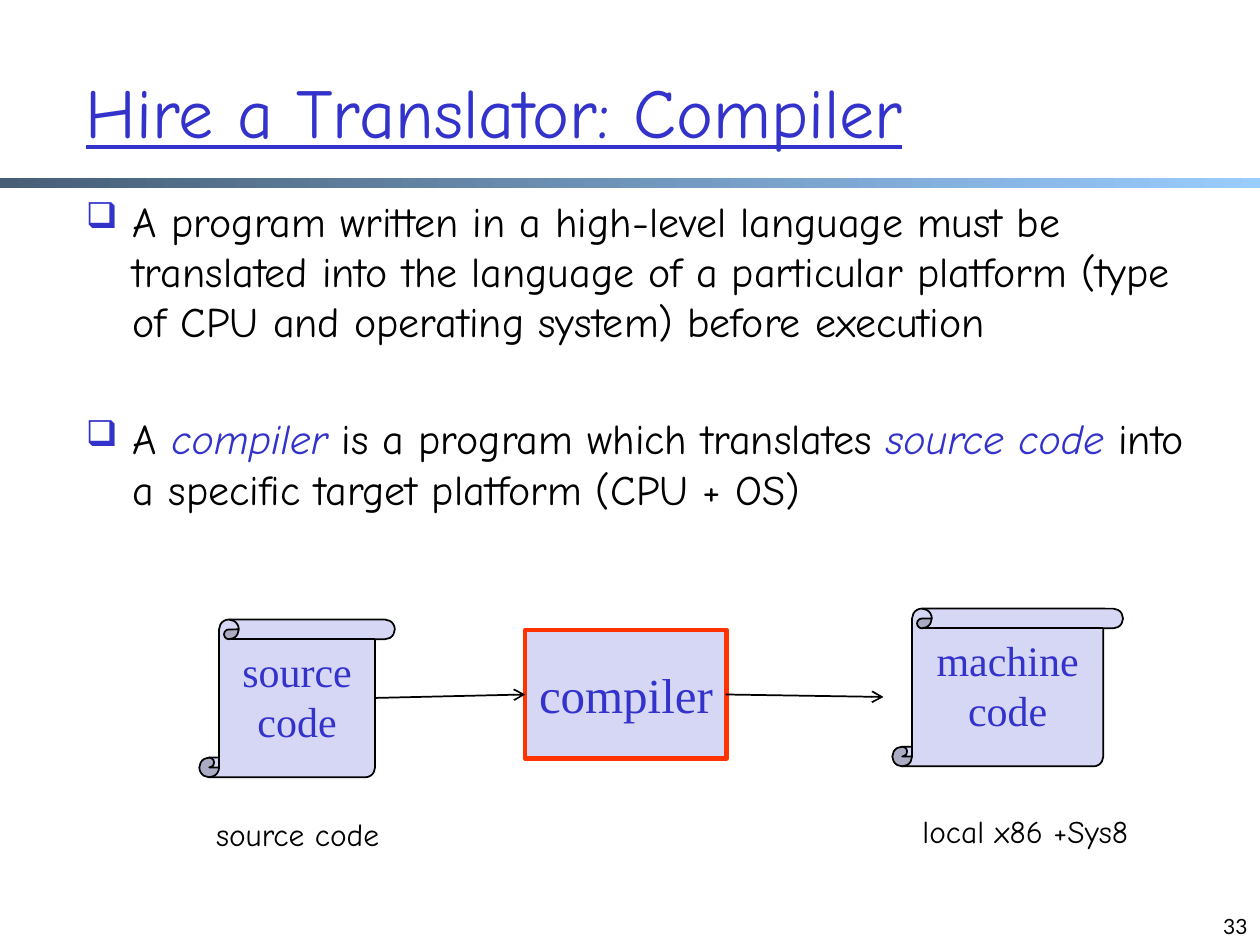
import pptx
import pptx.util
import pptx.dml.color
import pptx.enum.shapes
import pptx.enum.text
import pptx.oxml
import pptx.oxml.ns

Cm = pptx.util.Cm
Pt = pptx.util.Pt
RGBColor = pptx.dml.color.RGBColor
SHAPE = pptx.enum.shapes.MSO_SHAPE
ALIGN = pptx.enum.text.PP_ALIGN
ANCHOR = pptx.enum.text.MSO_ANCHOR

BLUE = RGBColor(0x33, 0x33, 0xCC)
LAVENDER = RGBColor(0xD6, 0xD6, 0xF5)
RED = RGBColor(0xFF, 0x33, 0x00)
BLACK = RGBColor(0, 0, 0)
SLATE = RGBColor(0x47, 0x5E, 0x76)
SKY = RGBColor(0x99, 0xCC, 0xFF)

HAND = "Comic Neue"
SERIF = "Times New Roman"
SANS = "Lato"


def format_run(r, font, size, color, italic=False):
    r.font.name = font
    r.font.size = Pt(size)
    r.font.color.rgb = color
    r.font.italic = italic


def set_text(tf, text, font, size, color, align, anchor, wrap=True):
    tf.text = text
    tf.word_wrap = wrap
    tf.vertical_anchor = anchor
    for p in tf.paragraphs:
        p.alignment = align
        for r in p.runs:
            format_run(r, font, size, color)


def add_text(s, box, text, font, size, color=BLACK, align=ALIGN.CENTER,
             anchor=ANCHOR.TOP, wrap=True):
    sp = s.shapes.add_textbox(*map(Cm, box))
    set_text(sp.text_frame, text, font, size, color, align, anchor, wrap)
    return sp


def add_divider(s):
    sp = s.shapes.add_shape(SHAPE.RECTANGLE, Cm(0), Cm(3.58), Cm(25.4), Cm(0.22))
    sp.shadow.inherit = False
    sp.line.fill.background()
    sp.fill.gradient()
    sp.fill.gradient_angle = 0
    for stop, color in zip(sp.fill.gradient_stops, (SLATE, SKY)):
        stop.color.rgb = color


def add_bullet(p):
    pPr = p._p.get_or_add_pPr()
    pPr.set("marL", str(Cm(0.95)))
    pPr.set("indent", str(-Cm(0.95)))
    ns = pptx.oxml.ns.nsdecls("a")
    for xml in (
        f'<a:buClr {ns}><a:srgbClr val="{BLUE}"/></a:buClr>',
        f'<a:buSzPct {ns} val="85000"/>',
        f'<a:buChar {ns} char="❑"/>',
    ):
        pPr.append(pptx.oxml.parse_xml(xml))


def add_bullets(s, box, items):
    tf = s.shapes.add_textbox(*map(Cm, box)).text_frame
    tf.word_wrap = True
    for i, (space, parts) in enumerate(items):
        p = tf.paragraphs[0] if i == 0 else tf.add_paragraph()
        p.space_before = Pt(space)
        add_bullet(p)
        for text, term in parts:
            r = p.add_run()
            r.text = text
            format_run(r, HAND, 24, BLUE if term else BLACK, term)


def add_node(s, kind, box, text, size, line, width, anchor, wrap=True):
    sp = s.shapes.add_shape(kind, *map(Cm, box))
    sp.shadow.inherit = False
    sp.fill.solid()
    sp.fill.fore_color.rgb = LAVENDER
    sp.line.color.rgb = line
    sp.line.width = Pt(width)
    set_text(sp.text_frame, text, SERIF, size, BLUE, ALIGN.CENTER, anchor, wrap)


def add_arrow(s, start, end):
    c = s.shapes.add_connector(pptx.enum.shapes.MSO_CONNECTOR.STRAIGHT,
                               *map(Cm, start + end))
    c.line.color.rgb = BLACK
    c.line.width = Pt(1)
    ns = pptx.oxml.ns.nsdecls("a")
    spPr = c._element.spPr
    spPr.find(pptx.oxml.ns.qn("a:ln")).append(
        pptx.oxml.parse_xml(f'<a:tailEnd {ns} type="arrow"/>'))
    spPr.append(pptx.oxml.parse_xml(f"<a:effectLst {ns}/>"))


def main():
    prs = pptx.Presentation()
    prs.slide_width, prs.slide_height = Cm(25.4), Cm(19.05)
    s = prs.slides.add_slide(prs.slide_layouts[6])

    add_divider(s)
    add_text(s, (19.48, 17.78, 5.92, 1.27), "33", SANS, 12,
             align=ALIGN.RIGHT, anchor=ANCHOR.BOTTOM)
    title = add_text(s, (1.48, 1.27, 21.08, 1.9), "Hire a Translator: Compiler",
                     HAND, 40, BLUE, ALIGN.LEFT, ANCHOR.MIDDLE)
    title.text_frame.paragraphs[0].runs[0].font.underline = True

    add_bullets(s, (1.48, 3.81, 23.06, 13.61), [
        (5, [("A program written in a high-level language must be translated "
              "into the language of a particular platform (type of CPU and "
              "operating system) before execution", False)]),
        (38, [("A ", False), ("compiler", True),
              (" is a program which translates ", False),
              ("source code", True),
              (" into a specific target platform (CPU + OS)", False)]),
    ])

    add_node(s, SHAPE.RECTANGLE, (10.59, 12.7, 4.06, 2.59), "compiler", 28,
             RED, 2.5, ANCHOR.MIDDLE, wrap=False)
    for box, text in (((4.02, 12.49, 3.94, 3.18), "source\ncode"),
                      ((17.99, 12.27, 4.65, 3.18), "machine\ncode")):
        add_node(s, SHAPE.VERTICAL_SCROLL, box, text, 24, BLACK, 1, ANCHOR.TOP)
    for box, text in (((3.97, 16.31, 4.06, 1.02), "source code"),
                      ((18.03, 16.25, 5.28, 1.02), "local x86 +Sys8")):
        add_text(s, box, text, HAND, 18, wrap=False)

    add_arrow(s, (7.54, 14.07), (10.59, 14))
    add_arrow(s, (14.63, 14), (17.81, 14.05))

    prs.save("out.pptx")


if __name__ == "__main__":
    main()
